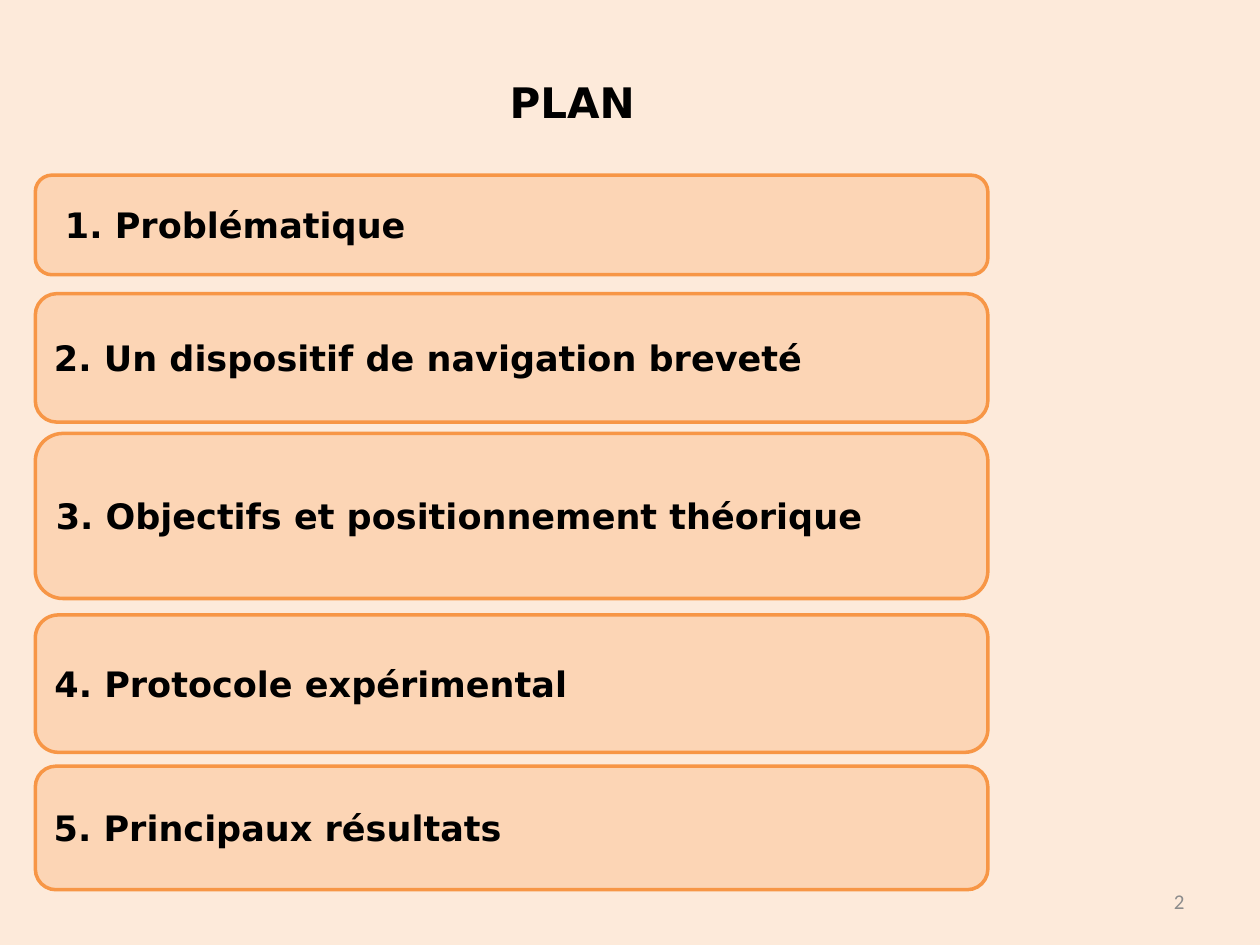
import pptx
import pptx.util
import pptx.dml.color
import pptx.enum.shapes
import pptx.enum.text

Pt = pptx.util.Pt
ALIGN = pptx.enum.text.PP_ALIGN
SHAPES = pptx.enum.shapes.MSO_SHAPE

BACKGROUND = "FDEADA"
CARD_FILL = "FCD5B5"
CARD_LINE = "F79646"
CARD_LEFT, CARD_WIDTH = 20.2, 544.3

CARDS = [
    ("1. Problématique", 100.1, 56.9, 14.2),
    ("2. Un dispositif de navigation breveté", 167.8, 73.4, 7.2),
    ("3. Objectifs et positionnement théorique", 247.7, 94.3, 7.2),
    ("4. Protocole expérimental", 351.4, 78.5, 7.2),
    ("5. Principaux résultats", 437.8, 70.6, 7.2),
]


def color(value):
    return pptx.dml.color.RGBColor.from_string(value)


def write_text(box, text, size=20, font="DejaVu Sans", ink="000000", bold=True,
               align=ALIGN.LEFT, left=7.2, right=7.2):
    frame = box.text_frame
    frame.word_wrap = True
    frame.vertical_anchor = pptx.enum.text.MSO_ANCHOR.MIDDLE
    frame.margin_left, frame.margin_right = Pt(left), Pt(right)
    para = frame.paragraphs[0]
    para.alignment = align
    span = para.add_run()
    span.text = text
    span.font.size = Pt(size)
    span.font.name = font
    span.font.bold = bold
    span.font.color.rgb = color(ink)


def add_box(page, shape, left, top, width, height, fill, line=None):
    box = page.shapes.add_shape(shape, Pt(left), Pt(top), Pt(width), Pt(height))
    box.shadow.inherit = False
    box.fill.solid()
    box.fill.fore_color.rgb = color(fill)
    if line:
        box.line.color.rgb = color(line)
        box.line.width = Pt(2)
    else:
        box.line.fill.background()
    return box


def add_title(page, text):
    box = add_box(page, SHAPES.RECTANGLE, 115.9, 21.6, 430.6, 72.7, BACKGROUND)
    write_text(box, text, size=24, align=ALIGN.CENTER, right=15.5)


def add_card(page, text, top, height, inset):
    box = add_box(page, SHAPES.ROUNDED_RECTANGLE, CARD_LEFT, top, CARD_WIDTH, height,
                  CARD_FILL, CARD_LINE)
    write_text(box, text, left=inset)


def add_page_number(page, number):
    box = page.shapes.add_textbox(Pt(516), Pt(500.5), Pt(168), Pt(28.8))
    write_text(box, number, size=12, font="Calibri", ink="8C8C8C", bold=False,
               align=ALIGN.RIGHT)


def main():
    deck = pptx.Presentation()
    deck.slide_width, deck.slide_height = Pt(720), Pt(540)
    page = deck.slides.add_slide(deck.slide_layouts[6])
    page.background.fill.solid()
    page.background.fill.fore_color.rgb = color(BACKGROUND)
    add_title(page, "PLAN")
    add_page_number(page, "2")
    for text, top, height, inset in CARDS:
        add_card(page, text, top, height, inset)
    deck.save("out.pptx")


if __name__ == "__main__":
    main()
